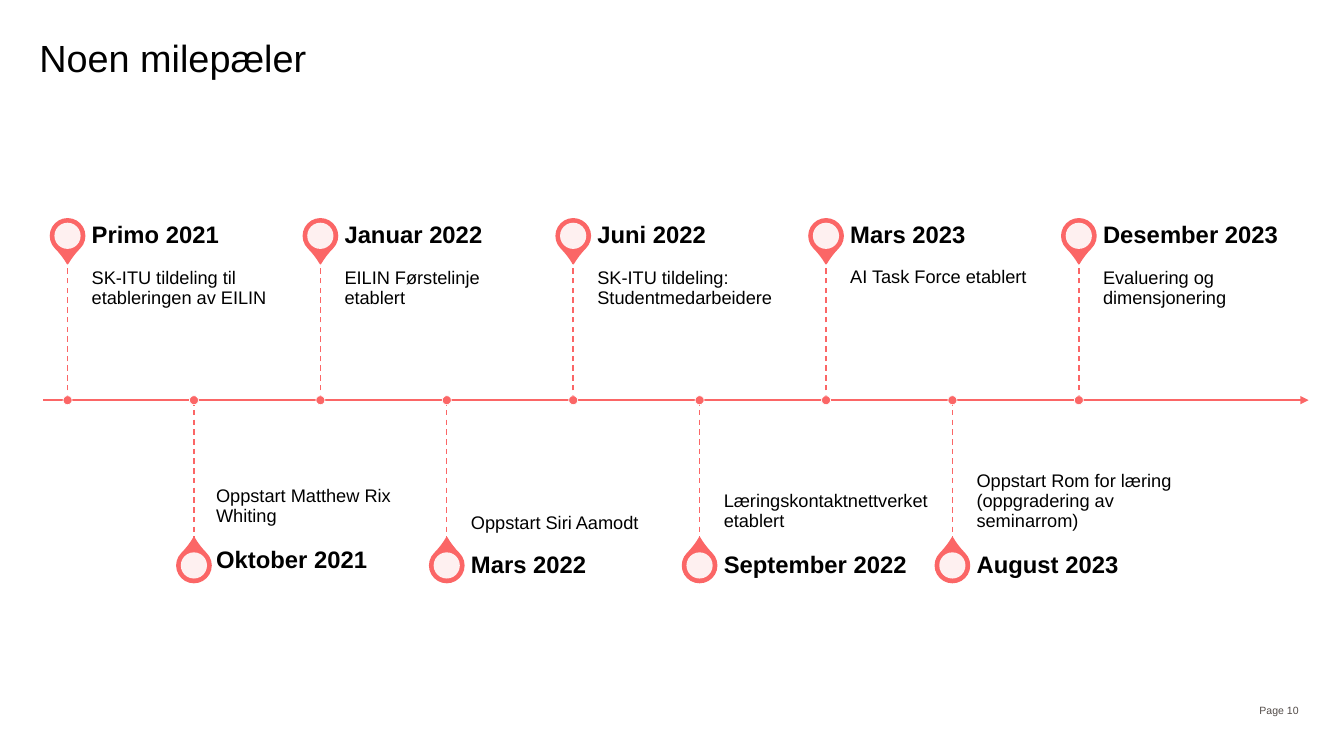
from lxml import etree
from pptx import Presentation
from pptx.dml.color import RGBColor
from pptx.enum.dml import MSO_LINE
from pptx.enum.shapes import MSO_CONNECTOR, MSO_SHAPE
from pptx.enum.text import MSO_ANCHOR, PP_ALIGN
from pptx.oxml.ns import qn
from pptx.util import Emu, Pt

PX = 9144  # 100 px to the inch
CORAL = RGBColor(0xFB, 0x66, 0x66)
WHITE = RGBColor(0xFF, 0xFF, 0xFF)
BLACK = RGBColor(0x00, 0x00, 0x00)
BROWN = RGBColor(0x52, 0x4B, 0x48)

TEARDROP, OVAL = MSO_SHAPE.TEAR, MSO_SHAPE.OVAL
STRAIGHT, DASH = MSO_CONNECTOR.STRAIGHT, MSO_LINE.DASH
TOP, MIDDLE, BOTTOM = MSO_ANCHOR.TOP, MSO_ANCHOR.MIDDLE, MSO_ANCHOR.BOTTOM
LEFT, RIGHT = PP_ALIGN.LEFT, PP_ALIGN.RIGHT

AXIS_Y = 397
FIRST_X, LAST_X = 67, 1070
PIN_OFFSET = 163
LABEL_W, LABEL_H, DETAIL_H = 204, 49, 139
LABEL_GAP = 24

# Date, event, shift of the text from its regular place
MILESTONES = [
    ("Primo 2021", "SK-ITU tildeling til etableringen av EILIN", (0, 0)),
    ("Oktober 2021", "Oppstart Matthew Rix Whiting", (-2, -5)),
    ("Januar 2022", "EILIN Førstelinje etablert", (0, 0)),
    ("Mars 2022", "Oppstart Siri Aamodt", (0, 0)),
    ("Juni 2022", "SK-ITU tildeling: Studentmedarbeidere", (0, 0)),
    ("September 2022", "Læringskontaktnettverket etablert", (0, 0)),
    ("Mars 2023", "AI Task Force etablert", (0, 0)),
    ("August 2023", "Oppstart Rom for læring (oppgradering av seminarrom)", (0, 0)),
    ("Desember 2023", "Evaluering og dimensjonering", (0, 0)),
]


def px(value):
    return Emu(round(value * PX))


def add_text(slide, text, box, size, color=BLACK, bold=False,
             anchor=TOP, align=LEFT, insets=(0, 0, 0, 0)):
    """Insets are left, top, right, bottom in px."""
    frame = slide.shapes.add_textbox(*map(px, box)).text_frame
    left, top, right, bottom = map(px, insets)
    frame_format = {
        "word_wrap": True, "vertical_anchor": anchor,
        "margin_left": left, "margin_top": top,
        "margin_right": right, "margin_bottom": bottom,
    }
    for name, value in frame_format.items():
        setattr(frame, name, value)
    paragraph = frame.paragraphs[0]
    paragraph.alignment = align
    paragraph.line_spacing = 0.9
    run = paragraph.add_run()
    run.text = text
    font_format = {"name": "Arial", "size": Pt(size), "bold": bold}
    for name, value in font_format.items():
        setattr(run.font, name, value)
    run.font.color.rgb = color


def add_line(slide, start, end, width, dash=None):
    line = slide.shapes.add_connector(STRAIGHT, *map(px, start + end))
    line.line.color.rgb = CORAL
    line.line.width = Pt(width)
    if dash:
        line.line.dash_style = dash
    etree.SubElement(line._element.spPr, qn("a:effectLst"))
    return line


def add_centred(slide, kind, x, y, size, fill, outline=None, width=0):
    """Place a square shape by its centre point."""
    shape = slide.shapes.add_shape(
        kind, px(x - size / 2), px(y - size / 2), px(size), px(size))
    shape.shadow.inherit = False
    shape.fill.solid()
    shape.fill.fore_color.rgb = fill
    if outline is None:
        shape.line.fill.background()
    else:
        shape.line.color.rgb = outline
        shape.line.width = Pt(width)
    return shape


def add_axis(slide):
    axis = add_line(slide, (43, AXIS_Y), (1298, AXIS_Y), 1.5)
    outline = axis.line._get_or_add_ln()
    etree.SubElement(outline, qn("a:tailEnd"), type="triangle")


def add_pin(slide, x, y, rotation):
    drop = add_centred(slide, TEARDROP, x, y, 34, CORAL, CORAL, 1)
    drop.adjustments[0] = 1.15
    drop.rotation = rotation
    eye = add_centred(slide, OVAL, x, y, 26, WHITE)
    color = eye._element.spPr.find(qn("a:solidFill")).find(qn("a:srgbClr"))
    etree.SubElement(color, qn("a:alpha"), val="90000")


def add_milestone(slide, x, above, date, event, shift):
    if above:
        pin_y, rotation = AXIS_Y - PIN_OFFSET, 135
        detail_y = AXIS_Y - DETAIL_H
        label_y = stem_end = detail_y
        label_y -= LABEL_H
        anchor, insets = TOP, (0, 9, 9, 14)
    else:
        pin_y, rotation = AXIS_Y + PIN_OFFSET + 1, 315
        detail_y = AXIS_Y
        label_y = stem_end = AXIS_Y + DETAIL_H + 1
        anchor, insets = BOTTOM, (0, 14, 0, 9)
    dx, dy = shift
    text_x = x + LABEL_GAP + dx

    add_pin(slide, x, pin_y, rotation)
    add_text(slide, event, (text_x, detail_y + dy, LABEL_W, DETAIL_H), 13,
             anchor=anchor, insets=insets)
    add_text(slide, date, (text_x, label_y + dy, LABEL_W, LABEL_H), 17,
             bold=True, anchor=MIDDLE, insets=(0, 0, 12, 0))
    add_line(slide, (x, AXIS_Y), (x, stem_end), 1, DASH)
    add_centred(slide, OVAL, x, AXIS_Y, 9, CORAL, WHITE, 0.5)


def main():
    deck = Presentation()
    deck.slide_width, deck.slide_height = px(1333), px(750)
    slide = deck.slides.add_slide(deck.slide_layouts[6])

    add_text(slide, "Page 10", (1232, 685, 66, 40), 7.5, BROWN,
             anchor=MIDDLE, align=RIGHT, insets=(10, 5, 10, 5))
    add_text(slide, "Noen milepæler", (39, 39, 1255, 59), 27)
    add_axis(slide)
    step = (LAST_X - FIRST_X) / (len(MILESTONES) - 1)
    for index, (date, event, shift) in enumerate(MILESTONES):
        add_milestone(slide, FIRST_X + index * step, index % 2 == 0,
                      date, event, shift)
    deck.save("out.pptx")


if __name__ == "__main__":
    main()
